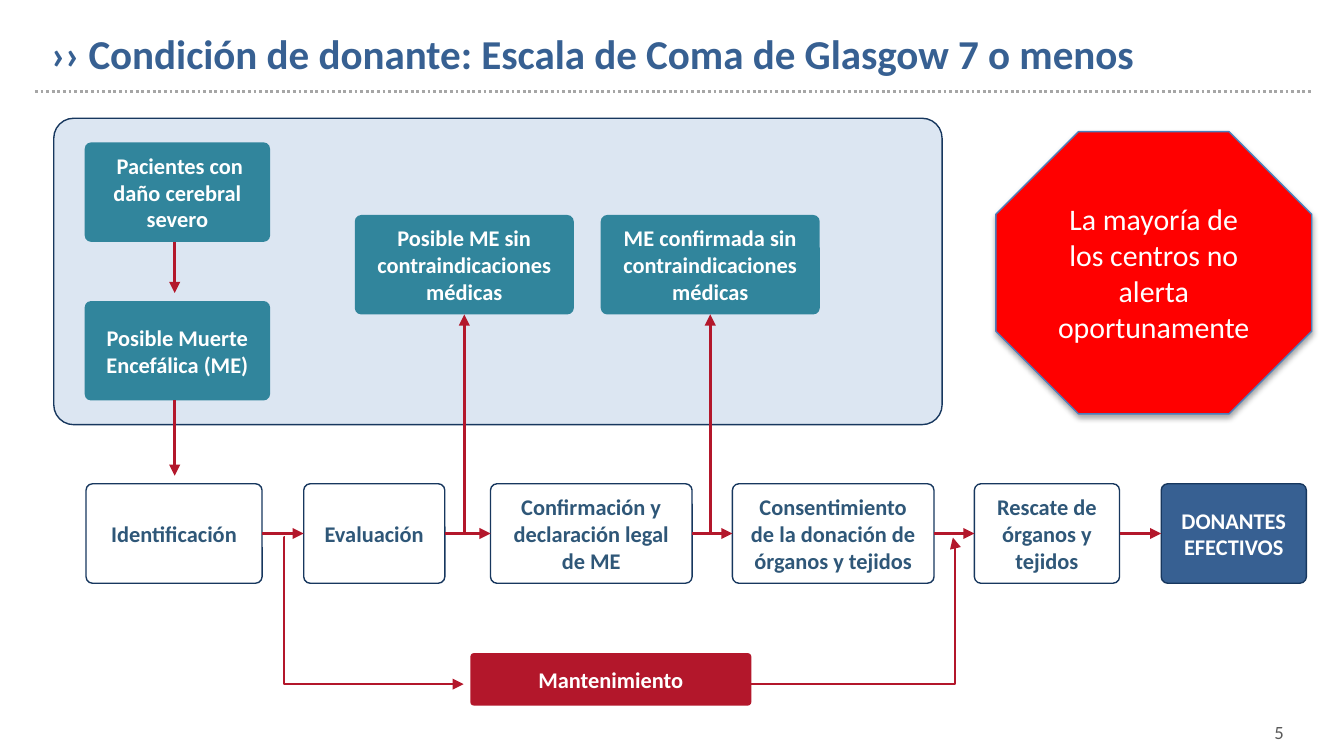
from pptx import Presentation
from pptx import util as u
from pptx.dml.color import RGBColor
from pptx.enum import dml, shapes, text
from pptx.oxml import parse_xml
from pptx.oxml.ns import nsdecls, qn
from lxml import etree

NAVY = RGBColor(0x17, 0x37, 0x5E)
BLUE = RGBColor(0x37, 0x60, 0x92)
SLATE = RGBColor(0x2F, 0x57, 0x78)
PALE = RGBColor(0xDC, 0xE6, 0xF2)
TEAL = RGBColor(0x31, 0x85, 0x9C)
CRIMSON = RGBColor(0xB3, 0x17, 0x2B)
RED = RGBColor(0xFF, 0x00, 0x00)
EDGE = RGBColor(0x4B, 0x7E, 0xBC)
WHITE = RGBColor(0xFF, 0xFF, 0xFF)
GRAY = RGBColor(0xA6, 0xA6, 0xA6)
DARK = RGBColor(0x59, 0x59, 0x59)

KIND = shapes.MSO_SHAPE
LINK = shapes.MSO_CONNECTOR
ALIGN = text.PP_ALIGN
WIDTH = 10
STEP_Y, BOX_H = 3.6, 0.74
FLOW_Y = STEP_Y + BOX_H / 2


def write(shape, words, size, color, bold=True, align=ALIGN.CENTER):
    """Fill a shape with text, one paragraph per line of words."""
    frame = shape.text_frame
    frame.text = words
    frame.vertical_anchor = text.MSO_ANCHOR.MIDDLE
    for para in frame.paragraphs:
        para.alignment = align
        font = para.font
        font.name, font.size, font.bold = "Calibri", u.Pt(size), bold
        font.color.rgb = color


def add_box(slide, area, fill=None, edge=None, kind=KIND.ROUNDED_RECTANGLE):
    box = slide.shapes.add_shape(kind, *map(u.Inches, area))
    box.shadow.inherit = False
    if kind == KIND.ROUNDED_RECTANGLE:
        box.adjustments[0] = 0.065
    if fill is None:
        box.fill.background()
    else:
        box.fill.solid()
        box.fill.fore_color.rgb = fill
    if edge is None:
        box.line.fill.background()
    else:
        box.line.color.rgb = edge
        box.line.width = u.Pt(0.75)
    return box


def add_label(slide, area, words, fill=None, edge=None, color=WHITE):
    box = add_box(slide, area, fill, edge)
    write(box, words, 12, color)
    return box


def add_line(slide, start, end, color, kind=LINK.STRAIGHT):
    line = slide.shapes.add_connector(kind, *map(u.Inches, start + end))
    line.line.color.rgb = color
    line.line.width = u.Pt(1.5)
    etree.SubElement(line._element.spPr, qn("a:effectLst"))
    return line


def add_arrow(slide, start, end, kind=LINK.STRAIGHT):
    arrow = add_line(slide, start, end, CRIMSON, kind)
    etree.SubElement(arrow.line._get_or_add_ln(), qn("a:tailEnd"), type="triangle")
    return arrow


def add_elbow(slide, start, end, bend):
    """Bent arrow; bend is the turning point in thousandths of a percent."""
    arrow = add_arrow(slide, start, end, LINK.ELBOW)
    geom = arrow._element.spPr.find(qn("a:prstGeom"))
    guides = geom.find(qn("a:avLst"))
    if guides is None:
        guides = etree.SubElement(geom, qn("a:avLst"))
    etree.SubElement(guides, qn("a:gd"), name="adj1", fmla=f"val {bend}")


def add_title(slide):
    title = slide.shapes.title
    title.left, title.top = u.Inches(0.28), u.Inches(0.11)
    title.width, title.height = u.Inches(9.56), u.Inches(0.57)
    write(title, "›› Condición de donante: Escala de Coma de Glasgow 7 o menos",
          22, BLUE, align=ALIGN.LEFT)
    title.text_frame.auto_size = text.MSO_AUTO_SIZE.NONE
    rule = add_line(slide, (0.26, 0.68), (9.76, 0.68), GRAY)
    rule.line.dash_style = dml.MSO_LINE.ROUND_DOT


def add_steps(slide):
    """Bottom row of process steps, joined left to right."""
    steps = [
        (0.64, 1.31, "Identificación"),
        (2.26, 1.05, "Evaluación"),
        (3.65, 1.5, "Confirmación y declaración legal\nde ME"),
        (5.45, 1.5, "Consentimiento\nde la donación de órganos y tejidos"),
        (7.25, 1.08, "Rescate de órganos y tejidos"),
    ]
    boxes = [add_label(slide, (x, STEP_Y, w, BOX_H), words, None, NAVY, SLATE)
             for x, w, words in steps]
    boxes.append(add_label(slide, (8.64, STEP_Y, 1.08, BOX_H),
                           "DONANTES\nEFECTIVOS", BLUE, NAVY))
    for left, right in zip(boxes, boxes[1:]):
        arrow = add_arrow(slide, (0, 0), (1, 1))
        arrow.begin_connect(left, 3)
        arrow.end_connect(right, 1)


def add_states(slide):
    """Patient states in the panel and their links to the steps."""
    for y, words, tip in [(1.06, " Pacientes con daño cerebral severo", 2.18),
                          (2.24, "Posible Muerte Encefálica (ME)", 3.54)]:
        add_label(slide, (0.63, y, 1.38, BOX_H), words, TEAL)
        add_arrow(slide, (1.3, y + BOX_H), (1.3, tip))
    wide = 1.63
    for x, words in [(2.64, "Posible ME sin contraindicaciones médicas"),
                     (4.47, "ME confirmada sin contraindicaciones médicas")]:
        box = add_label(slide, (x, 1.6, wide, BOX_H), words, TEAL)
        mid = x + wide / 2
        add_arrow(slide, (mid, FLOW_Y), (mid, 2.34)).end_connect(box, 2)


def add_upkeep(slide):
    """Maintenance branch below the steps."""
    add_label(slide, (3.5, 4.86, 2.09, 0.39), "Mantenimiento", CRIMSON)
    add_elbow(slide, (2.12, 4), (3.45, 5.09), -500)
    add_elbow(slide, (5.31, 5.09), (7.09, 4), 100900)


def add_alert(slide):
    sign = add_box(slide, (7.41, 0.98, 2.35, 2.1), RED, EDGE, KIND.OCTAGON)
    write(sign, "La mayoría de los centros no alerta oportunamente", 16, WHITE, False)
    effects = sign._element.spPr.find(qn("a:effectLst"))
    effects.append(parse_xml(
        f'<a:outerShdw {nsdecls("a")} blurRad="{u.Pt(3.1)}" dist="{u.Pt(1.8)}" '
        'dir="5400000" rotWithShape="0"><a:srgbClr val="000000">'
        '<a:alpha val="35000"/></a:srgbClr></a:outerShdw>'))


def add_number(slide):
    area = map(u.Inches, (9.2, 5.31, 0.45, 0.27))
    write(slide.shapes.add_textbox(*area), "5", 10, DARK, False, ALIGN.RIGHT)


def main():
    deck = Presentation()
    # Widescreen 16:9 page
    deck.slide_width, deck.slide_height = u.Inches(WIDTH), u.Inches(WIDTH * 9 / 16)
    slide = deck.slides.add_slide(deck.slide_layouts[5])
    add_title(slide)
    add_box(slide, (0.4, 0.88, 6.61, 2.28), PALE, NAVY)
    add_steps(slide)
    add_states(slide)
    add_upkeep(slide)
    add_alert(slide)
    add_number(slide)
    deck.save("out.pptx")


if __name__ == "__main__":
    main()
